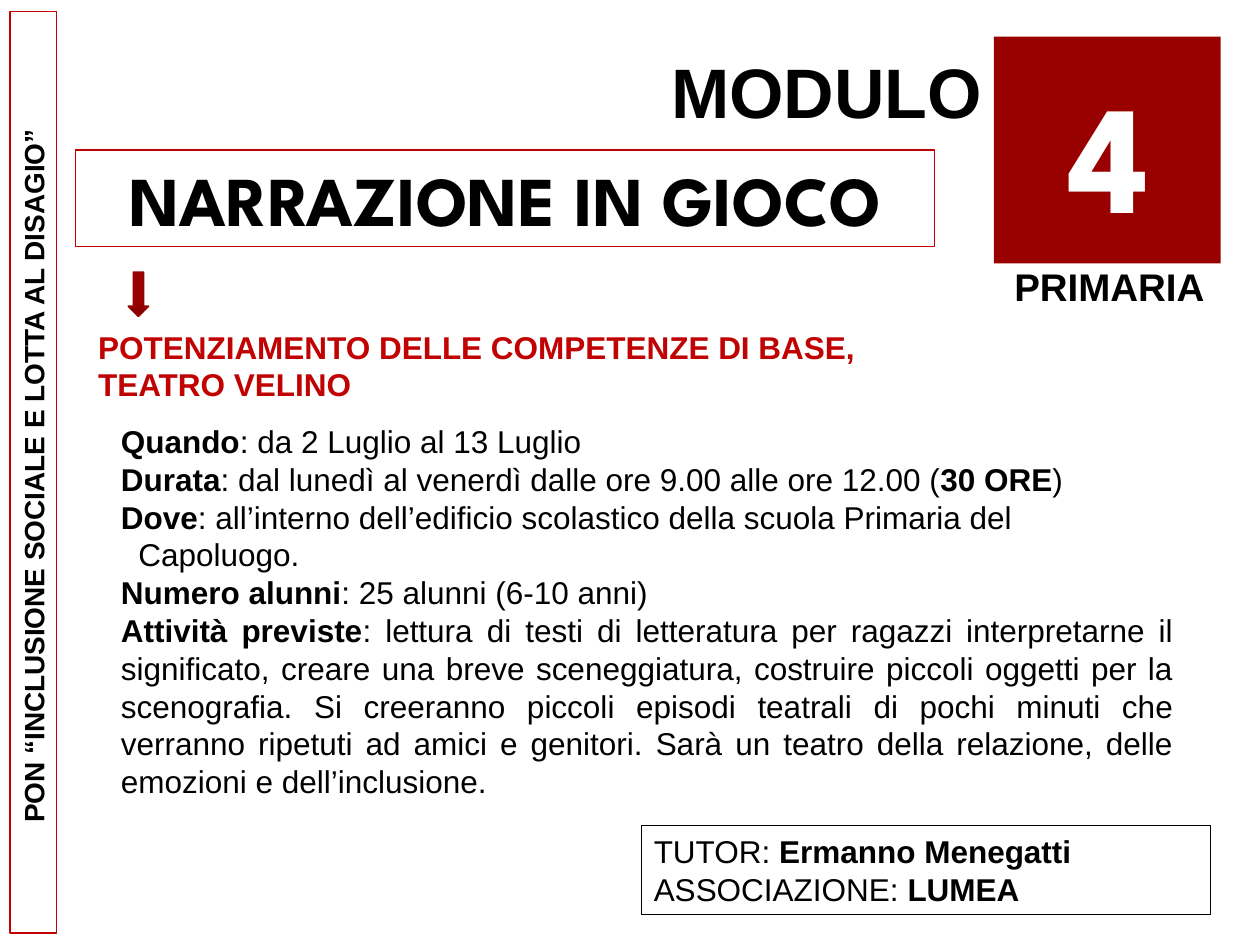
"""Build the slide for module 4, a summer storytelling course."""
from pptx import Presentation
from pptx.dml.color import RGBColor
from pptx.enum.shapes import MSO_SHAPE
from pptx.enum.text import MSO_ANCHOR, MSO_AUTO_SIZE, PP_ALIGN
from pptx.util import Pt

RECTANGLE, DOWN_ARROW = MSO_SHAPE.RECTANGLE, MSO_SHAPE.DOWN_ARROW
TOP, MIDDLE = MSO_ANCHOR.TOP, MSO_ANCHOR.MIDDLE
LEFT, CENTER, RIGHT, JUSTIFY = PP_ALIGN.LEFT, PP_ALIGN.CENTER, PP_ALIGN.RIGHT, PP_ALIGN.JUSTIFY
GROW = MSO_AUTO_SIZE.SHAPE_TO_FIT_TEXT

BLACK = RGBColor(0, 0, 0)
WHITE = RGBColor(255, 255, 255)
RED = RGBColor(0xC0, 0x02, 0x02)
DARK_RED = RGBColor(0x99, 0, 0)
ARROW_SHADE = RGBColor(0x83, 0, 0)
ARROW_EDGE = RGBColor(0x96, 0, 0)
DISPLAY = "League Spartan"
HANGING = 10

PROGRAMME = "PON “INCLUSIONE SOCIALE E LOTTA AL DISAGIO” "
SUBTITLE = "POTENZIAMENTO DELLE COMPETENZE DI BASE, TEATRO VELINO"
DETAILS = [
    [("Quando", True), (": da 2 Luglio al 13 Luglio", False)],
    [("Durata", True), (": dal lunedì al venerdì dalle ore 9.00 alle ore 12.00 (", False),
     ("30 ORE", True), (")", False)],
    [("Dove", True),
     (": all’interno dell’edificio scolastico della scuola Primaria del\vCapoluogo.", False)],
    [("Numero alunni", True), (": 25 alunni (6-10 anni)", False)],
    [("Attività previste", True),
     (": lettura di testi di letteratura per ragazzi interpretarne il significato, "
      "creare una breve sceneggiatura, costruire piccoli oggetti per la scenografia. "
      "Si creeranno piccoli episodi teatrali di pochi minuti che verranno ripetuti ad "
      "amici e genitori. Sarà un teatro della relazione, delle emozioni e "
      "dell’inclusione.", False)],
]
CONTACTS = [
    [("TUTOR: ", False), ("Ermanno Menegatti", True)],
    [("ASSOCIAZIONE: ", False), ("LUMEA", True)],
]


def add_figure(slide, kind, box, line=None, width=1):
    figure = slide.shapes.add_shape(kind, *map(Pt, box))
    figure.shadow.inherit = False
    figure.fill.background()
    if line is None:
        figure.line.fill.background()
    else:
        figure.line.color.rgb = line
        figure.line.width = Pt(width)
    return figure


def add_text(slide, text, box, *, size=18, font="Arial", color=BLACK, align=LEFT,
             frame=None, frame_width=0.75, rotation=0):
    if frame is None:
        holder = slide.shapes.add_textbox(*map(Pt, box))
    else:
        holder = add_figure(slide, RECTANGLE, box, frame, frame_width)
    holder.rotation = rotation
    body = holder.text_frame
    body.word_wrap = True
    body.auto_size = GROW
    body.vertical_anchor = TOP if frame is None else MIDDLE
    rows = [[(text, True)]] if isinstance(text, str) else text
    for index, row in enumerate(rows):
        paragraph = body.paragraphs[0] if index == 0 else body.add_paragraph()
        paragraph.alignment = align
        for part, bold in row:
            for number, piece in enumerate(part.split("\v")):
                if number:
                    paragraph.add_line_break()
                    paragraph.alignment = LEFT
                    properties = paragraph._p.get_or_add_pPr()
                    properties.set("marL", str(Pt(HANGING)))
                    properties.set("indent", str(-Pt(HANGING)))
                run = paragraph.add_run()
                run.text = piece
                run.font.name = font
                run.font.size = Pt(size)
                run.font.bold = bold
                run.font.color.rgb = color


def main():
    deck = Presentation()
    deck.slide_width, deck.slide_height = Pt(720), Pt(540)
    slide = deck.slides.add_slide(deck.slide_layouts[6])

    badge = add_figure(slide, RECTANGLE, (568, 21, 129.6, 129.6))
    badge.fill.solid()
    badge.fill.fore_color.rgb = DARK_RED

    add_text(slide, PROGRAMME, (-244.3, 256.5, 526.5, 26.7), size=16, align=CENTER,
             frame=RED, frame_width=1, rotation=270)
    add_text(slide, "MODULO", (366.5, 24, 201.6, 55.4), size=40, align=RIGHT)
    add_text(slide, "4", (577.4, 30.2, 113, 113.8), size=88, font=DISPLAY,
             color=WHITE, align=CENTER)
    add_text(slide, "PRIMARIA", (568, 147, 131.8, 33.8), size=22, align=CENTER)
    add_text(slide, "NARRAZIONE IN GIOCO", (43.2, 85.7, 491, 55.4), size=40,
             font=DISPLAY, align=CENTER, frame=RED)
    add_text(slide, SUBTITLE, (49, 183.6, 519.8, 51), color=RED)

    arrow = add_figure(slide, DOWN_ARROW, (73.4, 155.5, 11.5, 25.2), ARROW_EDGE)
    arrow.fill.gradient()
    arrow.fill.gradient_angle = 90
    stops = arrow.fill.gradient_stops
    for stop, color, position in zip(stops, (ARROW_SHADE, DARK_RED), (0, 0.35)):
        stop.color.rgb = color
        stop.position = position

    add_text(slide, DETAILS, (62, 237.6, 615.6, 225.4), align=JUSTIFY)
    add_text(slide, CONTACTS, (366.5, 471.6, 325.4, 51), frame=BLACK)
    deck.save("out.pptx")


if __name__ == "__main__":
    main()
